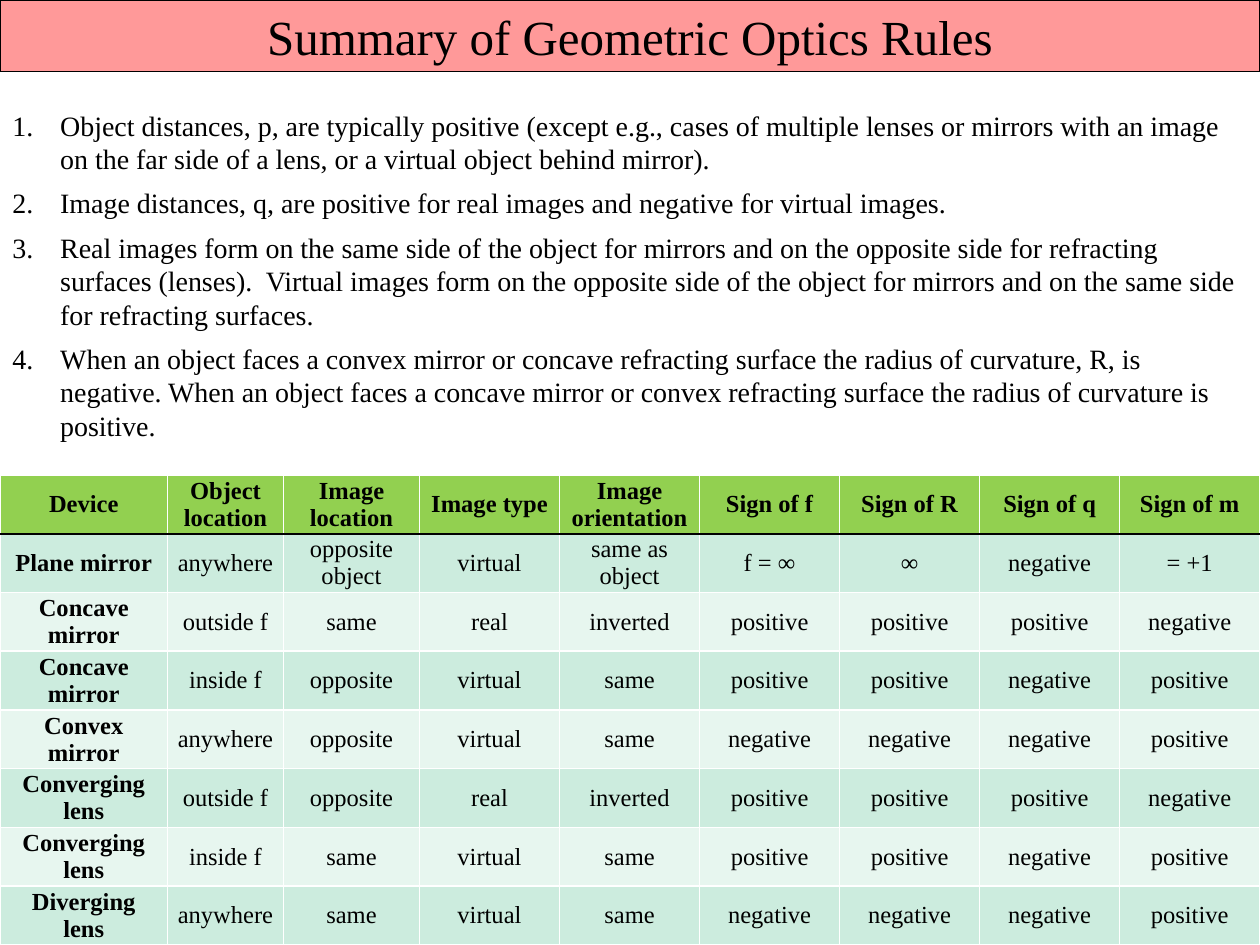
"""Build a one-slide summary of sign rules in geometric optics."""
from lxml import etree
from pptx import Presentation
from pptx import util as u
from pptx.dml.color import RGBColor
from pptx.enum import shapes, text
from pptx.oxml import ns

TITLE = "Summary of Geometric Optics Rules"
RULES = [
    "Object distances, p, are typically positive (except e.g., cases of multiple lenses or mirrors "
    "with an image on the far side of a lens, or a virtual object behind mirror).",
    "Image distances, q, are positive for real images and negative for virtual images.",
    "Real images form on the same side of the object for mirrors and on the opposite side for "
    "refracting surfaces (lenses).  Virtual images form on the opposite side of the object for "
    "mirrors and on the same side for refracting surfaces.",
    "When an object faces a convex mirror or concave refracting surface the radius of curvature, R, "
    "is negative. When an object faces a concave mirror or convex refracting surface the radius of "
    "curvature is positive.",
]
DEVICES = [
    ("Device", "Object location", "Image location", "Image type", "Image orientation",
     "Sign of f", "Sign of R", "Sign of q", "Sign of m"),
    ("Plane mirror", "anywhere", "opposite object", "virtual", "same as object",
     "f = ∞", "∞", "negative", "= +1"),
    ("Concave mirror", "outside f", "same", "real", "inverted",
     "positive", "positive", "positive", "negative"),
    ("Concave mirror", "inside f", "opposite", "virtual", "same",
     "positive", "positive", "negative", "positive"),
    ("Convex mirror", "anywhere", "opposite", "virtual", "same",
     "negative", "negative", "negative", "positive"),
    ("Converging lens", "outside f", "opposite", "real", "inverted",
     "positive", "positive", "positive", "negative"),
    ("Converging lens", "inside f", "same", "virtual", "same",
     "positive", "positive", "negative", "positive"),
    ("Diverging lens", "anywhere", "same", "virtual", "same",
     "negative", "negative", "negative", "positive"),
]
THEME = {
    "font": "Times New Roman", "ink": "000000", "banner": "FF9999", "header": "92D050",
    "bands": ("E7F6EF", "CCECDE"), "grid": "FFFFFF",
    "title_size": 28, "rule_size": 16, "table_size": 14,
}
WIDTH, HEIGHT = u.Inches(10), u.Inches(7.5)
BANNER_HEIGHT = u.Inches(0.57)
RULES_TOP, RULES_HEIGHT = u.Inches(0.81), u.Inches(2.78)
TABLE_TOP = u.Inches(3.77)
LEADING_COLUMNS = [0.133, 0.092, 0.108]
INDENT = u.Inches(0.38)


def color(name):
    return RGBColor.from_string(name)


def style(paragraph, size, bold=False):
    font = paragraph.font
    font.name, font.size, font.bold = THEME["font"], u.Pt(size), bold
    font.color.rgb = color(THEME["ink"])


def number(paragraph):
    properties = paragraph._p.get_or_add_pPr()
    properties.set("marL", str(INDENT))
    properties.set("indent", str(-INDENT))
    paragraph.space_after = u.Pt(6)
    etree.SubElement(properties, ns.qn("a:buFont"), typeface="+mj-lt")
    etree.SubElement(properties, ns.qn("a:buAutoNum"), type="arabicPeriod")


def set_borders(cell, edges):
    properties = cell._tc.get_or_add_tcPr()
    for side, value in edges.items():
        line = etree.SubElement(properties, ns.qn(f"a:ln{side}"), w=str(u.Pt(1)))
        fill = etree.SubElement(line, ns.qn("a:solidFill"))
        etree.SubElement(fill, ns.qn("a:srgbClr"), val=value)


def add_device_table(slide):
    row_count, column_count = len(DEVICES), len(DEVICES[0])
    table_height = HEIGHT - TABLE_TOP
    table = slide.shapes.add_table(row_count, column_count, 0, TABLE_TOP, WIDTH, table_height).table
    rest = column_count - len(LEADING_COLUMNS)
    shares = LEADING_COLUMNS + [(1 - sum(LEADING_COLUMNS)) / rest] * rest
    for column, share in zip(table.columns, shares):
        column.width = int(WIDTH * share)
    for row_index, values in enumerate(DEVICES):
        table.rows[row_index].height = table_height // row_count
        is_header = row_index == 0
        fill = THEME["header"] if is_header else THEME["bands"][row_index % 2]
        edges = dict.fromkeys("LRTB", THEME["grid"])
        if row_index < 2:
            edges["B" if is_header else "T"] = THEME["ink"]
        for column_index, value in enumerate(values):
            cell = table.cell(row_index, column_index)
            cell.margin_left = cell.margin_right = u.Inches(0.07)
            cell.margin_top = cell.margin_bottom = 0
            cell.vertical_anchor = text.MSO_ANCHOR.MIDDLE
            set_borders(cell, edges)
            cell.fill.solid()
            cell.fill.fore_color.rgb = color(fill)
            paragraph = cell.text_frame.paragraphs[0]
            paragraph.text = value
            paragraph.alignment = text.PP_ALIGN.CENTER
            style(paragraph, THEME["table_size"], is_header or column_index == 0)


def add_rules(slide):
    frame = slide.shapes.add_textbox(0, RULES_TOP, WIDTH, RULES_HEIGHT).text_frame
    frame.word_wrap = True
    frame.auto_size = text.MSO_AUTO_SIZE.SHAPE_TO_FIT_TEXT
    for index, rule in enumerate(RULES):
        paragraph = frame.add_paragraph() if index else frame.paragraphs[0]
        paragraph.text = rule
        number(paragraph)
        style(paragraph, THEME["rule_size"])


def add_banner(slide):
    banner = slide.shapes.add_shape(shapes.MSO_SHAPE.RECTANGLE, 0, 0, WIDTH, BANNER_HEIGHT)
    banner.shadow.inherit = False
    banner.fill.solid()
    banner.fill.fore_color.rgb = color(THEME["banner"])
    banner.line.color.rgb = color(THEME["ink"])
    banner.line.width = u.Pt(0.75)
    frame = banner.text_frame
    frame.word_wrap = True
    frame.auto_size = text.MSO_AUTO_SIZE.SHAPE_TO_FIT_TEXT
    frame.vertical_anchor = text.MSO_ANCHOR.TOP
    paragraph = frame.paragraphs[0]
    paragraph.text = TITLE
    paragraph.alignment = text.PP_ALIGN.CENTER
    style(paragraph, THEME["title_size"])


def main():
    presentation = Presentation()
    presentation.slide_width, presentation.slide_height = WIDTH, HEIGHT
    slide = presentation.slides.add_slide(presentation.slide_layouts[6])
    add_device_table(slide)
    add_rules(slide)
    add_banner(slide)
    presentation.save("out.pptx")


if __name__ == "__main__":
    main()
